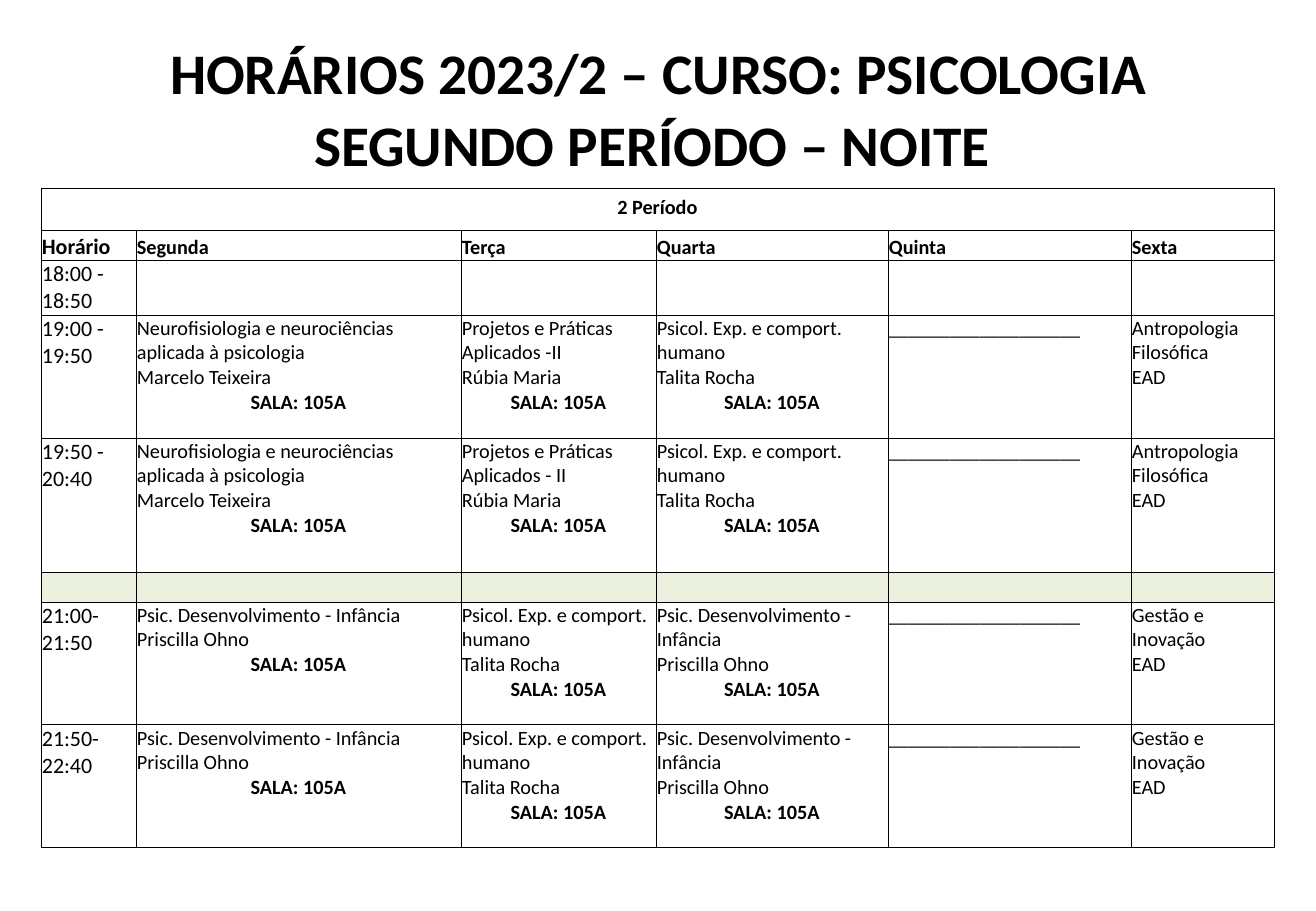
from lxml import etree
from pptx import Presentation
from pptx.dml.color import RGBColor
from pptx.enum.text import MSO_ANCHOR, MSO_AUTO_SIZE, PP_ALIGN
from pptx.oxml.ns import qn
from pptx.util import Pt

PX = 7526  # EMU per px
LEFT, MID = PP_ALIGN.LEFT, PP_ALIGN.CENTER
TOP, CENTER, LOW = MSO_ANCHOR.TOP, MSO_ANCHOR.MIDDLE, MSO_ANCHOR.BOTTOM
TITLE_ONLY = 5
COLORS = {"ink": "000000", "paper": "FFFFFF", "break": "EBF1DE"}

# Timetable content
WIDTHS = [95, 325, 195, 232, 243, 143]
HEIGHTS = [42, 30, 55, 123, 134, 30, 123, 123]
DAYS = ["Horário", "Segunda", "Terça", "Quarta", "Quinta", "Sexta"]
ROOM = "SALA: 105A"
BLANK = "_" * 19
NEURO = "Neurofisiologia e neurociências aplicada à psicologia\vMarcelo Teixeira"
PROJECT = "Projetos e Práticas Aplicados {}\vRúbia Maria"
EXPER = "Psicol. Exp. e comport. humano\vTalita Rocha"
CHILD = "Psic. Desenvolvimento - Infância\vPriscilla Ohno"
ANTHRO = "Antropologia Filosófica\vEAD"
GESTAO = "Gestão e Inovação\vEAD"
SLOTS = [
    ["18:00 - 18:50", "", "", "", "", ""],
    ["19:00 - 19:50", NEURO, PROJECT.format("-II"), EXPER, BLANK, ANTHRO],
    ["19:50 - 20:40", NEURO, PROJECT.format("- II"), EXPER, BLANK, ANTHRO],
    [""] * 6,
    ["21:00-21:50", CHILD, EXPER, CHILD, BLANK, GESTAO],
    ["21:50-22:40", CHILD, EXPER, CHILD, BLANK, GESTAO],
]
ROOM_COLS = (1, 2, 3)


class Deck:
    font = "Calibri"

    def __init__(self, width, height):
        self.prs = Presentation()
        self.prs.slide_width, self.prs.slide_height = width * PX, height * PX
        layout = self.prs.slide_layouts[TITLE_ONLY]
        self.slide = self.prs.slides.add_slide(layout)

    def style(self, para, size, bold=False, align=LEFT):
        para.alignment = align
        font = para.font
        font.name, font.size, font.bold = self.font, Pt(size), bold
        font.color.rgb = RGBColor.from_string(COLORS["ink"])

    def title(self, lines, x, y, w, h, size):
        box = self.slide.shapes.title
        box.left, box.top, box.width, box.height = (v * PX for v in (x, y, w, h))
        frame = box.text_frame
        frame.text = "\n".join(lines)
        frame.auto_size = MSO_AUTO_SIZE.NONE
        frame.word_wrap = True
        frame.vertical_anchor = CENTER
        for para in frame.paragraphs:
            para.line_spacing, para.space_after = 0.9, Pt(6)
            self.style(para, size, True, MID)

    def table(self, x, y, widths, heights):
        grid = self.slide.shapes.add_table(
            len(heights), len(widths), x * PX, y * PX,
            sum(widths) * PX, sum(heights) * PX).table
        grid.first_row = grid.horz_banding = False
        for col, width in zip(grid.columns, widths):
            col.width = width * PX
        for row, height in zip(grid.rows, heights):
            row.height = height * PX
        return grid

    def cell(self, cell, parts, fill="paper", anchor=TOP, inset=(1, 1, 1, 0)):
        """Each part is (text, size, bold, align)."""
        self.border(cell)
        cell.fill.solid()
        cell.fill.fore_color.rgb = RGBColor.from_string(COLORS[fill])
        cell.vertical_anchor = anchor
        (cell.margin_left, cell.margin_top,
         cell.margin_right, cell.margin_bottom) = (v * PX for v in inset)
        frame = cell.text_frame
        for i, (text, size, bold, align) in enumerate(parts):
            para = frame.add_paragraph() if i else frame.paragraphs[0]
            if text:
                para.text = text
            self.style(para, size, bold, align)
            if not text:
                etree.SubElement(para._p, qn("a:endParaRPr"), sz=str(size * 100))

    def border(self, cell):
        props = cell._tc.get_or_add_tcPr()
        for side in ("lnL", "lnR", "lnT", "lnB"):
            line = etree.SubElement(props, qn("a:" + side), w=str(Pt(0.5)))
            solid = etree.SubElement(line, qn("a:solidFill"))
            etree.SubElement(solid, qn("a:srgbClr"), val=COLORS["ink"])


def main():
    deck = Deck(1316, 911)

    # Title
    deck.title(["HORÁRIOS 2023/2 – CURSO: PSICOLOGIA", "SEGUNDO PERÍODO – NOITE "],
               66, 36, 1185, 152, 34)

    # Period band and day names
    grid = deck.table(41, 188, WIDTHS, HEIGHTS)
    grid.cell(0, 0).merge(grid.cell(0, len(DAYS) - 1))
    for c, day in enumerate(DAYS):
        band = "" if c else "2 Período"
        deck.cell(grid.cell(0, c), [(band, 12, True, MID)], inset=(15, 7, 15, 7))
        size = 12 if c else 13
        deck.cell(grid.cell(1, c), [(day, size, True, LEFT)], anchor=LOW)

    # Class slots, with the break as a tinted row
    for r, slot in enumerate(SLOTS, 2):
        fill = "paper" if any(slot) else "break"
        for c, text in enumerate(slot):
            size = 12 if c or not text else 13
            parts = [(text, size, False, LEFT)]
            if text and c in ROOM_COLS:
                parts.append((ROOM, 12, True, MID))
            deck.cell(grid.cell(r, c), parts, fill)

    deck.prs.save("out.pptx")


if __name__ == "__main__":
    main()
